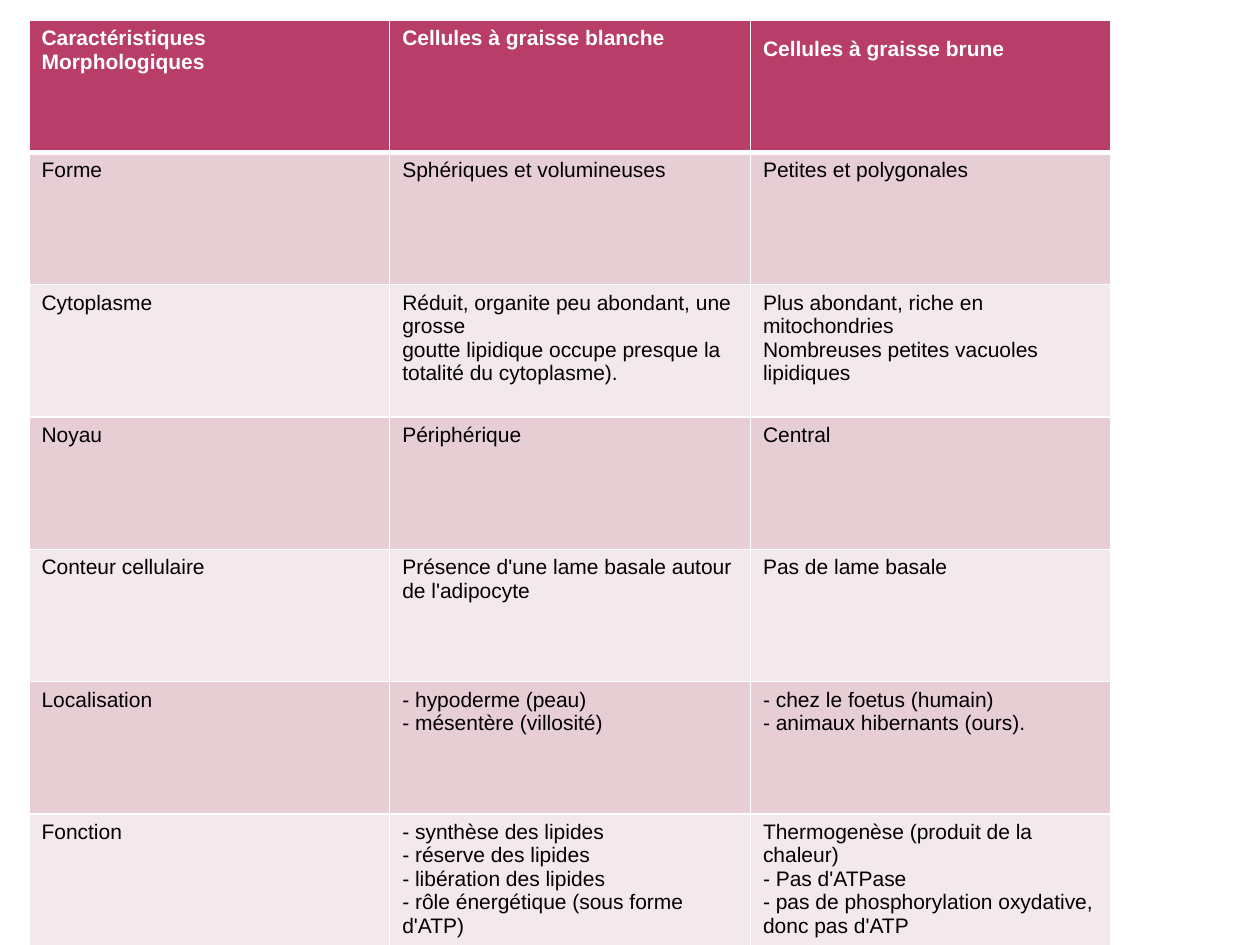
import pptx
import pptx.dml.color
import pptx.oxml
import pptx.oxml.ns
import pptx.util

SLIDE_WIDTH, SLIDE_HEIGHT = 10, 7.5
WHITE, BLACK = "FFFFFF", "000000"
HEADER_FILL = "B83D68"
BAND_FILLS = ("F3E8EB", "E6CED4")
THIN, THICK = 1, 3

COMPARISON = [
    ("Caractéristiques\nMorphologiques", "Cellules à graisse blanche", "Cellules à graisse brune"),
    ("Forme", "Sphériques et volumineuses", "Petites et polygonales"),
    ("Cytoplasme",
     "Réduit, organite peu abondant, une grosse\n"
     "goutte lipidique occupe presque la totalité du cytoplasme).",
     "Plus abondant, riche en mitochondries\nNombreuses petites vacuoles lipidiques"),
    ("Noyau", "Périphérique", "Central"),
    ("Conteur cellulaire", "Présence d'une lame basale autour de l'adipocyte",
     "Pas de lame basale"),
    ("Localisation", "- hypoderme (peau)\n- mésentère (villosité)",
     "- chez le foetus (humain)\n- animaux hibernants (ours)."),
    ("Fonction",
     "- synthèse des lipides\n- réserve des lipides\n- libération des lipides\n"
     "- rôle énergétique (sous forme d'ATP)",
     "Thermogenèse (produit de la chaleur)\n- Pas d'ATPase\n"
     "- pas de phosphorylation oxydative, donc pas d'ATP"),
]


def color(hex_value):
    return pptx.dml.color.RGBColor.from_string(hex_value)


def add_borders(cell, top, bottom):
    """Draw white edges; top and bottom are widths in points."""
    properties = cell._tc.get_or_add_tcPr()
    for edge, width in (("lnL", THIN), ("lnR", THIN), ("lnT", top), ("lnB", bottom)):
        properties.append(pptx.oxml.parse_xml(
            f'<a:{edge} {pptx.oxml.ns.nsdecls("a")} w="{pptx.util.Pt(width)}">'
            f'<a:solidFill><a:srgbClr val="{WHITE}"/></a:solidFill></a:{edge}>'))


def write_cell(cell, text, is_header):
    cell.text_frame.text = text
    for paragraph in cell.text_frame.paragraphs:
        for run in paragraph.runs:
            run.font.name = "Arial"
            run.font.size = pptx.util.Pt(12)
            run.font.bold = is_header
            run.font.color.rgb = color(WHITE if is_header else BLACK)


def add_comparison(slide, left, top, width, height):
    row_count, column_count = len(COMPARISON), len(COMPARISON[0])
    table = slide.shapes.add_table(
        row_count, column_count,
        *(pptx.util.Inches(length) for length in (left, top, width, height))).table
    for row_index, texts in enumerate(COMPARISON):
        is_header = row_index == 0
        for column_index, text in enumerate(texts):
            cell = table.cell(row_index, column_index)
            add_borders(cell, THICK if row_index == 1 else THIN, THICK if is_header else THIN)
            cell.fill.solid()
            cell.fill.fore_color.rgb = color(
                HEADER_FILL if is_header else BAND_FILLS[row_index % 2])
            write_cell(cell, text, is_header)
    # The last heading sits slightly lower than its neighbours.
    table.cell(0, column_count - 1).margin_top = pptx.util.Inches(0.14)


def main():
    presentation = pptx.Presentation()
    presentation.slide_width = pptx.util.Inches(SLIDE_WIDTH)
    presentation.slide_height = pptx.util.Inches(SLIDE_HEIGHT)
    slide = presentation.slides.add_slide(presentation.slide_layouts[6])
    add_comparison(slide, 0.23, 0.16, 8.59, 0.98 * SLIDE_HEIGHT)
    presentation.save("out.pptx")


if __name__ == "__main__":
    main()
